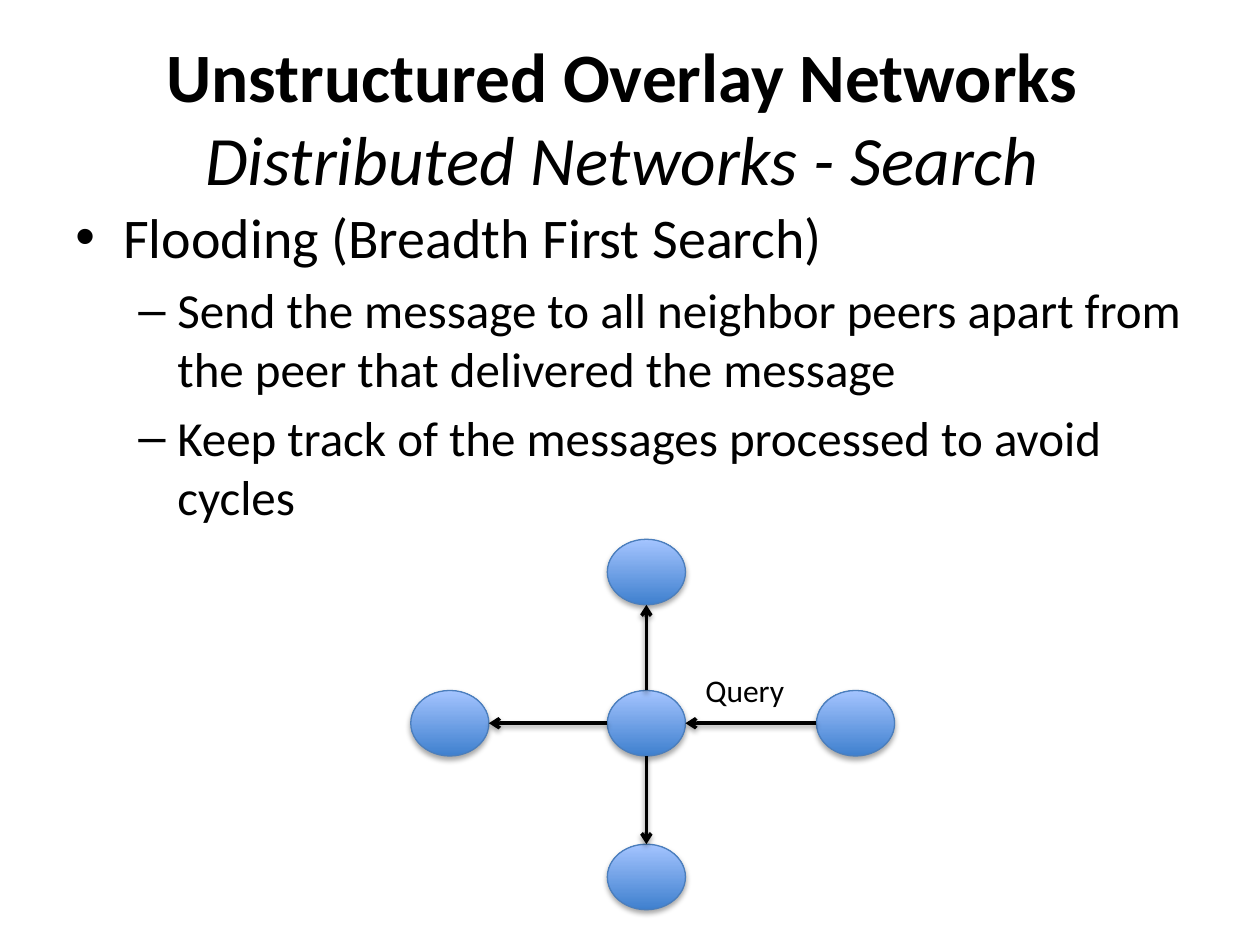
from dataclasses import dataclass

from lxml.etree import SubElement
from pptx import Presentation
from pptx.dml.color import RGBColor as RGB
from pptx.enum.shapes import MSO_CONNECTOR as Connector, MSO_SHAPE as Shape
from pptx.enum.text import MSO_ANCHOR as Anchor, MSO_AUTO_SIZE as AutoSize, PP_ALIGN as Align
from pptx.oxml.ns import qn
from pptx.util import Inches, Pt


@dataclass(frozen=True)
class Theme:
    font: str = "Calibri"
    ink: RGB = RGB(0, 0, 0)
    peer_dark: RGB = RGB(0x3F, 0x80, 0xCE)
    peer_light: RGB = RGB(0xA4, 0xC4, 0xFF)
    peer_line: RGB = RGB(0x4B, 0x7E, 0xBC)
    title: float = 39.6
    topic: float = 32
    detail: float = 28
    label: float = 18


@dataclass(frozen=True)
class Bullet:
    text: str
    size: float
    mark: str
    margin: float
    hang: float
    level: int = 0


@dataclass(frozen=True)
class Peer:
    x: float  # centre
    y: float
    w: float = 0.62
    h: float = 0.52

    def edge(self, dx: int, dy: int) -> tuple[float, float]:
        """Point on the outline in the direction (dx, dy)."""
        return self.x + dx * self.w / 2, self.y + dy * self.h / 2


THEME = Theme()
BULLETS = [
    Bullet("Flooding (Breadth First Search)", THEME.topic, "•", 0.38, 0.38),
    *(Bullet(text, THEME.detail, "–", 0.81, 0.31, 1) for text in (
        "Send the message to all neighbor peers apart from the peer that delivered the message",
        "Keep track of the messages processed to avoid cycles",
    )),
]
CENTER = Peer(5.13, 5.74)
SENDER = Peer(6.79, 5.74)
# Receiving peers, keyed by their direction from the center
RECEIVERS = {(-1, 0): Peer(3.57, 5.74), (0, -1): Peer(5.13, 4.54), (0, 1): Peer(5.13, 6.96)}


def style(font, size: float) -> None:
    font.name, font.size = THEME.font, Pt(size)
    font.color.rgb = THEME.ink


def place(sp, left: float, top: float, width: float, height: float) -> None:
    sp.left, sp.top, sp.width, sp.height = map(Inches, (left, top, width, height))


def add_shadow(sp, alpha: int, distance: float) -> None:
    effects = SubElement(sp._element.spPr, qn("a:effectLst"))
    shadow = SubElement(effects, qn("a:outerShdw"), blurRad=str(Pt(3.1)),
                        dist=str(Pt(distance)), dir="5400000", rotWithShape="0")
    color = SubElement(shadow, qn("a:srgbClr"), val="000000")
    SubElement(color, qn("a:alpha"), val=str(alpha * 1000))


def add_title(slide) -> None:
    title = slide.shapes.title
    place(title, 0.5, 0.3, 9, 1.25)
    tf = title.text_frame
    tf.auto_size, tf.vertical_anchor = AutoSize.NONE, Anchor.MIDDLE
    p = tf.paragraphs[0]
    p.alignment = Align.CENTER
    heading = p.add_run()
    heading.text = "Unstructured Overlay Networks "
    p.add_line_break()
    subtitle = p.add_run()
    subtitle.text = "Distributed Networks - Search "
    for r in (heading, subtitle):
        style(r.font, THEME.title)
    heading.font.bold = True
    subtitle.font.bold, subtitle.font.italic = False, True


def add_bullets(slide, bullets: list[Bullet]) -> None:
    box = slide.shapes.add_textbox(Inches(0.5), Inches(1.56), Inches(9), Inches(5.47))
    tf = box.text_frame
    tf.word_wrap = True
    for i, bullet in enumerate(bullets):
        p = tf.add_paragraph() if i else tf.paragraphs[0]
        p.text, p.level = bullet.text, bullet.level
        p.space_before = Pt(bullet.size * 0.2)
        style(p.font, bullet.size)
        props = p._p.get_or_add_pPr()
        props.set("marL", str(Inches(bullet.margin)))
        props.set("indent", str(-Inches(bullet.hang)))
        # Bullet tags stand before the default run properties
        defaults = props.find(qn("a:defRPr"))
        font = SubElement(props, qn("a:buFont"), typeface="Arial")
        mark = SubElement(props, qn("a:buChar"), char=bullet.mark)
        if defaults is not None:
            defaults.addprevious(font)
            defaults.addprevious(mark)


def add_peer(slide, peer: Peer) -> None:
    sp = slide.shapes.add_shape(Shape.OVAL, 0, 0, 0, 0)
    place(sp, peer.x - peer.w / 2, peer.y - peer.h / 2, peer.w, peer.h)
    sp.fill.gradient()
    sp.fill.gradient_angle = 90
    for stop, color in zip(sp.fill.gradient_stops, (THEME.peer_dark, THEME.peer_light)):
        stop.color.rgb = color
    sp.line.color.rgb, sp.line.width = THEME.peer_line, Pt(0.75)
    add_shadow(sp, 35, 1.8)


def add_arrow(slide, start: tuple[float, float], end: tuple[float, float]) -> None:
    line = slide.shapes.add_connector(Connector.STRAIGHT, *map(Inches, (*start, *end)))
    line.line.color.rgb, line.line.width = THEME.ink, Pt(2)
    SubElement(line.line._get_or_add_ln(), qn("a:tailEnd"), type="arrow")
    add_shadow(line, 38, 1.6)


def add_label(slide, text: str) -> None:
    box = slide.shapes.add_textbox(Inches(5.5), Inches(5.28), Inches(0.98), Inches(0.4))
    tf = box.text_frame
    tf.word_wrap, tf.auto_size = True, AutoSize.SHAPE_TO_FIT_TEXT
    p = tf.paragraphs[0]
    p.text = text
    style(p.font, THEME.label)


def main() -> None:
    prs = Presentation()
    prs.slide_width, prs.slide_height = Inches(10), Inches(7.5)
    slide = prs.slides.add_slide(prs.slide_layouts[5])
    add_title(slide)
    add_bullets(slide, BULLETS)

    # Peers, then the query coming in and being flooded onwards
    for peer in (CENTER, SENDER, *RECEIVERS.values()):
        add_peer(slide, peer)
    add_arrow(slide, SENDER.edge(-1, 0), CENTER.edge(1, 0))
    for (dx, dy), peer in RECEIVERS.items():
        add_arrow(slide, CENTER.edge(dx, dy), peer.edge(-dx, -dy))
    add_label(slide, "Query")
    prs.save("out.pptx")


if __name__ == "__main__":
    main()
